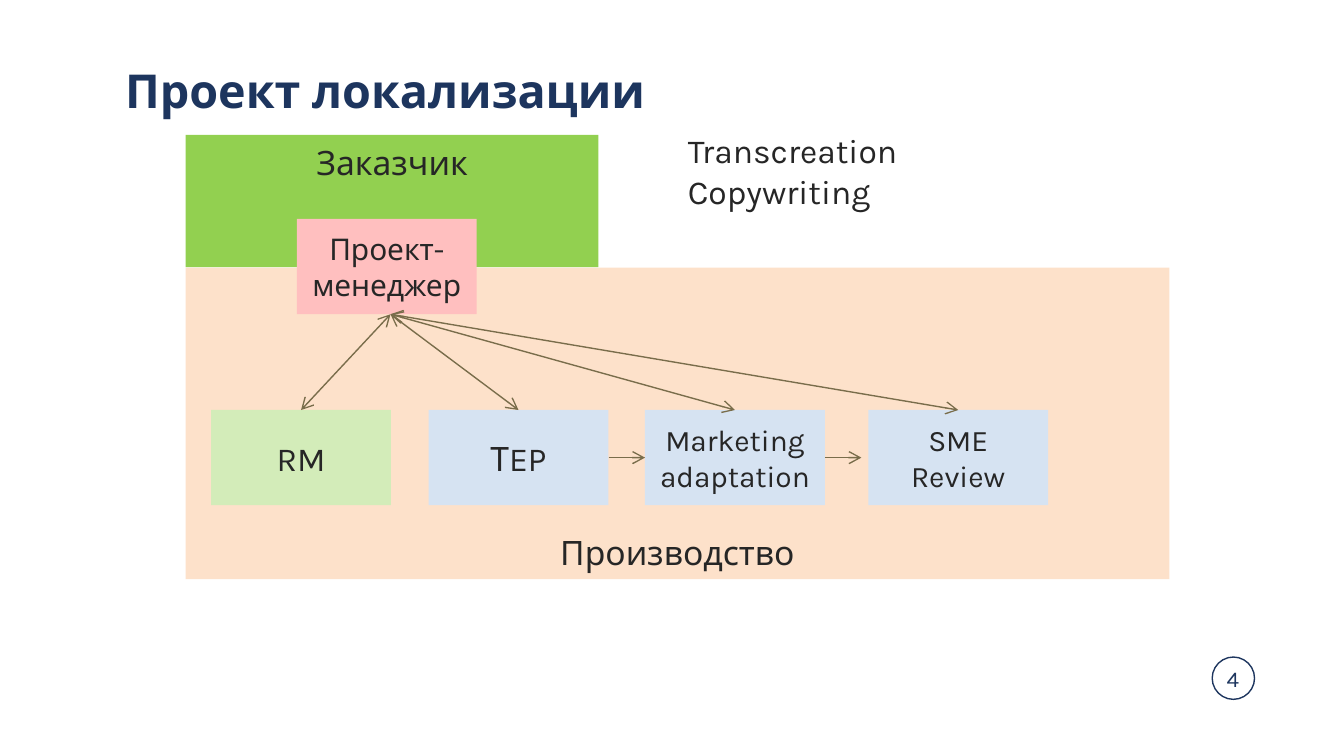
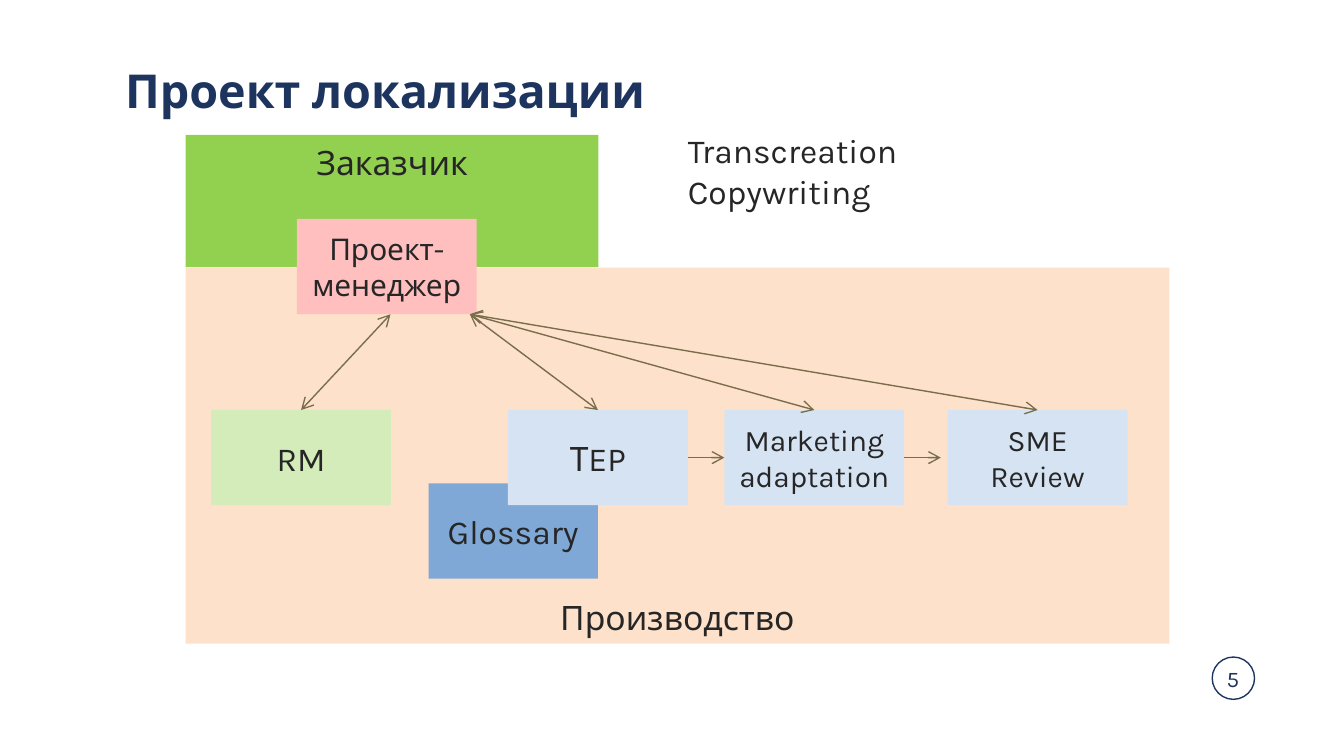
from lxml.etree import SubElement
from pptx import Presentation
from pptx.dml.color import RGBColor
from pptx.enum.shapes import MSO_CONNECTOR, MSO_SHAPE
from pptx.enum.text import MSO_ANCHOR, PP_ALIGN
from pptx.oxml.ns import qn
from pptx.util import Cm, Pt

FONT = "Karla"
NAVY = RGBColor(0x1D, 0x35, 0x5E)
INK = RGBColor(0x26, 0x26, 0x26)
ARROW = RGBColor(0x79, 0x6D, 0x4B)
PEACH = RGBColor(0xFD, 0xE1, 0xCA)
GREEN = RGBColor(0x92, 0xD0, 0x50)
PINK = RGBColor(0xFF, 0xBF, 0xBF)
LIGHT_GREEN = RGBColor(0xD3, 0xEC, 0xB9)
LIGHT_BLUE = RGBColor(0xD6, 0xE3, 0xF2)
BLUE = RGBColor(0x7F, 0xA8, 0xD7)

TITLE = "Проект локализации"
SERVICES = ["Transcreation", "Copywriting"]
STEPS = [("ТEP", 8.1, 18), ("Marketing adaptation", 12.19, 16), ("SME Review", 16.41, 16)]
SLIDES = [
    {"number": 4, "production_height": 5.89, "shift": 0, "glossary": None},
    {"number": 5, "production_height": 7.11, "shift": 1.5, "glossary": "Glossary"},
]

BOX_WIDTH, BOX_HEIGHT = 3.4, 1.8
PANEL_LEFT, PRODUCTION_TOP = 3.51, 5.06
MANAGER_LEFT, MANAGER_TOP = 5.61, 4.14
RESOURCE_LEFT, STEP_TOP = 3.99, 7.75
HUB_X, HUB_Y = 7.38, 5.94
STEP_ARROW = 0.69


def write(shape, lines, size, color=INK, align=PP_ALIGN.CENTER, anchor=MSO_ANCHOR.MIDDLE):
    frame = shape.text_frame
    frame.word_wrap = True
    frame.vertical_anchor = anchor
    frame.text = "\n".join(lines)
    for paragraph in frame.paragraphs:
        paragraph.alignment = align
        paragraph.font.name = FONT
        paragraph.font.size = Pt(size)
        paragraph.font.color.rgb = color


def add_box(slide, text, left, top, width, height, fill, size=18, anchor=MSO_ANCHOR.MIDDLE):
    shape = slide.shapes.add_shape(MSO_SHAPE.RECTANGLE, Cm(left), Cm(top), Cm(width), Cm(height))
    shape.shadow.inherit = False
    shape.fill.solid()
    shape.fill.fore_color.rgb = fill
    shape.line.fill.background()
    write(shape, [text], size, anchor=anchor)


def add_arrow(slide, start, end, ends):
    points = [Cm(value) for value in (*start, *end)]
    connector = slide.shapes.add_connector(MSO_CONNECTOR.STRAIGHT, *points)
    connector.line.color.rgb = ARROW
    connector.line.width = Pt(0.75)
    line = connector.line._get_or_add_ln()
    for end_name in ends:
        SubElement(line, qn(f"a:{end_name}"), type="arrow")
    SubElement(connector._element.spPr, qn("a:effectLst"))


def add_title(slide):
    title = slide.shapes.title
    title.left, title.top, title.width, title.height = Cm(2.11), Cm(0.58), Cm(21.2), Cm(2.39)
    write(title, [TITLE], 25, NAVY, PP_ALIGN.LEFT)
    paragraph = title.text_frame.paragraphs[0]
    paragraph.font.bold = True
    paragraph.line_spacing = 0.85


def add_page_number(slide, number):
    circle = slide.shapes.add_shape(MSO_SHAPE.OVAL, Cm(22.91), Cm(12.42), Cm(0.8), Cm(0.8))
    circle.shadow.inherit = False
    circle.fill.background()
    circle.line.color.rgb = NAVY
    circle.line.width = Pt(0.75)
    label = slide.shapes.add_textbox(Cm(22.4), Cm(12.45), Cm(1.8), Cm(0.76))
    write(label, [str(number)], 12, NAVY, anchor=MSO_ANCHOR.TOP)


def add_diagram(slide, production_height, shift, glossary):
    add_box(slide, "Производство", PANEL_LEFT, PRODUCTION_TOP, 18.59, production_height,
            PEACH, anchor=MSO_ANCHOR.BOTTOM)
    add_box(slide, "Заказчик", PANEL_LEFT, 2.55, 7.8, 2.5, GREEN, anchor=MSO_ANCHOR.TOP)
    add_box(slide, "Проект-менеджер", MANAGER_LEFT, MANAGER_TOP, BOX_WIDTH, BOX_HEIGHT, PINK, 16)
    add_box(slide, "RM", RESOURCE_LEFT, STEP_TOP, BOX_WIDTH, BOX_HEIGHT, LIGHT_GREEN)
    if glossary:
        add_box(slide, glossary, 8.1, 9.14, 3.2, BOX_HEIGHT, BLUE)
    for text, left, size in STEPS:
        add_box(slide, text, left + shift, STEP_TOP, BOX_WIDTH, BOX_HEIGHT, LIGHT_BLUE, size)

    both_ends = ("headEnd", "tailEnd")
    add_arrow(slide, (HUB_X, HUB_Y), (RESOURCE_LEFT + BOX_WIDTH / 2, STEP_TOP), both_ends)
    for _, left, _ in STEPS:
        middle = left + shift + BOX_WIDTH / 2
        add_arrow(slide, (HUB_X + shift, HUB_Y), (middle, STEP_TOP), both_ends)
    for _, left, _ in STEPS[:-1]:
        right, middle = left + shift + BOX_WIDTH, STEP_TOP + BOX_HEIGHT / 2
        add_arrow(slide, (right, middle), (right + STEP_ARROW, middle), ("tailEnd",))

    services = slide.shapes.add_textbox(Cm(12.75), Cm(2.34), Cm(4.9), Cm(2.57))
    write(services, SERVICES, 18, align=PP_ALIGN.LEFT, anchor=MSO_ANCHOR.TOP)


def main():
    presentation = Presentation()
    presentation.slide_width, presentation.slide_height = Cm(25.4), Cm(14.29)
    for content in SLIDES:
        slide = presentation.slides.add_slide(presentation.slide_layouts[5])
        add_title(slide)
        add_page_number(slide, content["number"])
        add_diagram(slide, content["production_height"], content["shift"], content["glossary"])
    presentation.save("out.pptx")


if __name__ == "__main__":
    main()
